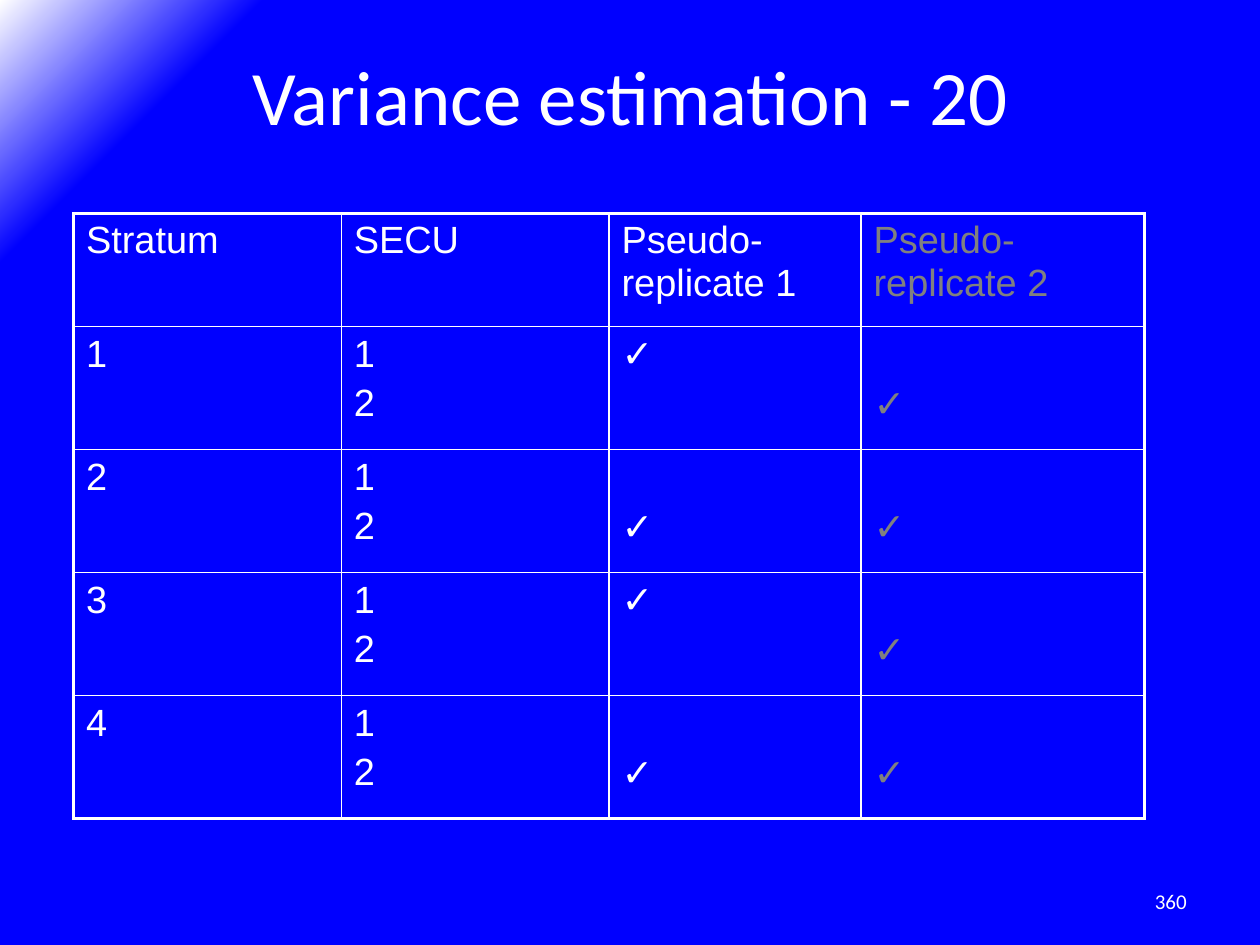
from dataclasses import dataclass

from pptx import Presentation
from pptx.dml.color import RGBColor
from pptx.enum import text
from pptx.oxml import parse_xml
from pptx.oxml.ns import nsdecls
from pptx.util import Pt


@dataclass(frozen=True)
class Theme:
    blue: str = "0000FF"
    white: str = "FFFFFF"
    grey: str = "808080"
    heading_font: str = "Calibri"
    table_font: str = "Arial"
    title_size: float = 52.8
    table_size: float = 26
    number_size: float = 14.4
    inset_x: float = 8.64
    inset_y: float = 4.32
    line_gap: float = 4.4
    line_pitch: float = 34.3
    outer_line: float = 2.25
    inner_line: float = 1


THEME = Theme()
CHECK = "✓"
HEADERS = ["Stratum", "SECU", "Pseudo-replicate 1", "Pseudo-replicate 2"]
CHECKED_SECUS = [(1, 2), (2, 2), (1, 2), (2, 2)]
COL_WIDTHS = [183.6, 183.6, 172.8, 194.4]
ROW_HEIGHTS = [77.8] + [84.4] * len(CHECKED_SECUS)


def style(p, font, size, color):
    p.font.name = font
    p.font.size = Pt(size)
    p.font.color.rgb = RGBColor.from_string(color)


def paint_background(s):
    s.background.fill.solid()
    bg = s.element.xpath("//p:bgPr")[0]
    stops = "".join(
        f'<a:gs pos="{pos * 1000}"><a:srgbClr val="{color}"/></a:gs>'
        for pos, color in [(0, THEME.blue), (88, THEME.blue), (100, THEME.white)]
    )
    bg.replace(bg[0], parse_xml(
        f'<a:gradFill {nsdecls("a")} rotWithShape="0"><a:gsLst>{stops}</a:gsLst>'
        '<a:path path="circle"><a:fillToRect l="100000" t="100000"/></a:path>'
        '</a:gradFill>'
    ))


def place_title(s, title, left, top, width, height):
    sp = s.shapes.title
    sp.left, sp.top, sp.width, sp.height = map(Pt, (left, top, width, height))
    tf = sp.text_frame
    tf.text = title
    tf.word_wrap = True
    tf.auto_size = text.MSO_AUTO_SIZE.NONE
    tf.vertical_anchor = text.MSO_ANCHOR.TOP
    tf.margin_left = tf.margin_right = Pt(THEME.inset_x)
    tf.margin_top = tf.margin_bottom = Pt(THEME.inset_y)
    p = tf.paragraphs[0]
    p.alignment = text.PP_ALIGN.CENTER
    style(p, THEME.heading_font, THEME.title_size, THEME.white)


def place_number(s, number, left, top, width, height):
    sp = s.shapes.add_textbox(*map(Pt, (left, top, width, height)))
    tf = sp.text_frame
    tf.word_wrap = True
    tf.vertical_anchor = text.MSO_ANCHOR.MIDDLE
    p = tf.paragraphs[0]
    p.text = number
    p.alignment = text.PP_ALIGN.RIGHT
    style(p, THEME.heading_font, THEME.number_size, THEME.white)


def set_borders(cell, outer_sides):
    tc_pr = cell._tc.get_or_add_tcPr()
    for i, side in enumerate("LRTB"):
        width = THEME.outer_line if side in outer_sides else THEME.inner_line
        tc_pr.insert(i, parse_xml(
            f'<a:ln{side} {nsdecls("a")} w="{int(Pt(width))}"><a:solidFill>'
            f'<a:srgbClr val="{THEME.white}"/></a:solidFill></a:ln{side}>'
        ))


def fill_cell(cell, lines, color, first_line=1):
    cell.fill.background()
    cell.margin_left = cell.margin_right = Pt(THEME.inset_x)
    cell.margin_top = Pt(THEME.inset_y + (first_line - 1) * THEME.line_pitch)
    cell.margin_bottom = Pt(THEME.inset_y)
    tf = cell.text_frame
    tf.text = "\n".join(lines)
    for i, p in enumerate(tf.paragraphs):
        style(p, THEME.table_font, THEME.table_size, color)
        if i:
            p.space_before = Pt(THEME.line_gap)


def place_replicate_table(s, left, top, width, height):
    rows, cols = len(ROW_HEIGHTS), len(COL_WIDTHS)
    table = s.shapes.add_table(rows, cols, *map(Pt, (left, top, width, height))).table
    table.first_row = table.horz_banding = False
    for column, w in zip(table.columns, COL_WIDTHS):
        column.width = Pt(w)
    for row, h in zip(table.rows, ROW_HEIGHTS):
        row.height = Pt(h)

    colors = [THEME.white] * 3 + [THEME.grey]
    for c, header in enumerate(HEADERS):
        fill_cell(table.cell(0, c), [header], colors[c])
    for r, secus in enumerate(CHECKED_SECUS, 1):
        fill_cell(table.cell(r, 0), [str(r)], colors[0])
        fill_cell(table.cell(r, 1), ["1", "2"], colors[1])
        for c, secu in enumerate(secus, 2):
            fill_cell(table.cell(r, c), [CHECK], colors[c], secu)

    for r in range(rows):
        for c in range(cols):
            edges = {"L": c == 0, "R": c == cols - 1, "T": r == 0, "B": r == rows - 1}
            set_borders(table.cell(r, c), [side for side, outer in edges.items() if outer])


def main():
    prs = Presentation()
    prs.slide_width, prs.slide_height = Pt(864), Pt(648)
    s = prs.slides.add_slide(prs.slide_layouts[5])
    paint_background(s)
    place_number(s, "360", 619.2, 600.5, 201.6, 34.5)
    place_replicate_table(s, 50.4, 146.2, sum(COL_WIDTHS), sum(ROW_HEIGHTS))
    place_title(s, "Variance estimation - 20", 43.2, 28.8, 777.6, 108)
    prs.save("out.pptx")


if __name__ == "__main__":
    main()
